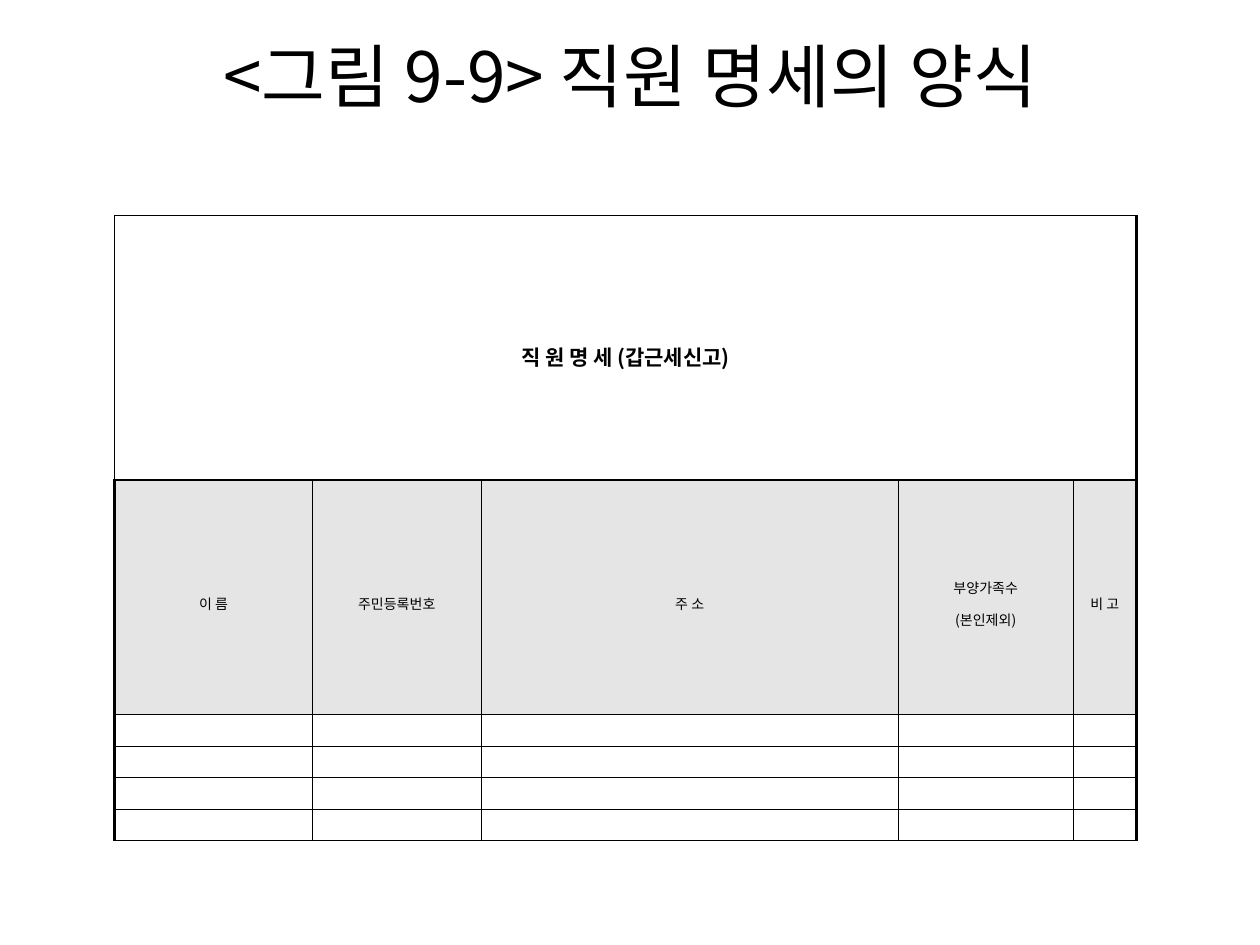
import dataclasses

import lxml.etree
import pptx
import pptx.dml.color
import pptx.enum.text
import pptx.oxml.ns
import pptx.util

Inches, Pt = pptx.util.Inches, pptx.util.Pt
Align, Anchor = pptx.enum.text.PP_ALIGN, pptx.enum.text.MSO_ANCHOR
qn = pptx.oxml.ns.qn

FONT = "Noto Sans CJK KR"
BLACK, WHITE, GRAY = "000000", "FFFFFF", "E5E5E5"
THIN, THICK = 0.28, 1.7
BLANKS = 4


@dataclasses.dataclass
class Field:
    label: str
    width: float


FIELDS = [
    Field("이 름", 1.57),
    Field("주민등록번호", 1.34),
    Field("주 소", 3.31),
    Field("부양가족수\n(본인제외)", 1.39),
    Field("비 고", 0.5),
]
HEIGHTS = [2.1, 1.86] + [0.25] * BLANKS


def color(code: str) -> pptx.dml.color.RGBColor:
    return pptx.dml.color.RGBColor.from_string(code)


def style(frame, size: float, bold: bool = False, space: float | None = None) -> None:
    for para in frame.paragraphs:
        para.alignment = Align.CENTER
        para.line_spacing = space
        for run in para.runs:
            font = run.font
            font.size, font.bold, font.name = Pt(size), bold, FONT
            font.color.rgb = color(BLACK)
            face = lxml.etree.SubElement(font._element, qn("a:ea"))
            face.set("typeface", FONT)
        end = lxml.etree.SubElement(para._p, qn("a:endParaRPr"))
        end.set("sz", str(round(size * 100)))


def border(cell, row: int, col: int) -> None:
    """Thin lines, with thick ones around the form and under its heading."""
    widths = {
        "L": THICK if col == 0 and row > 0 else THIN,
        "R": THICK if col == len(FIELDS) - 1 or row == 0 else THIN,
        "T": THICK if row == 1 else THIN,
        "B": THICK if row == 0 else THIN,
    }
    props = cell._tc.get_or_add_tcPr()
    for side, width in widths.items():
        line = lxml.etree.SubElement(props, qn(f"a:ln{side}"))
        line.set("w", str(int(Pt(width))))
        fill = lxml.etree.SubElement(line, qn("a:solidFill"))
        lxml.etree.SubElement(fill, qn("a:srgbClr")).set("val", BLACK)


def draw_cell(cell, row: int, col: int) -> None:
    cell.vertical_anchor = Anchor.MIDDLE
    cell.margin_left = cell.margin_right = Inches(0.05)
    cell.margin_top = cell.margin_bottom = Inches(0.01)
    border(cell, row, col)
    cell.fill.solid()
    cell.fill.fore_color.rgb = color(GRAY if row == 1 else WHITE)
    if row == 0 and col == 0:
        cell.text_frame.text = "직 원 명 세 (갑근세신고)"
        style(cell.text_frame, 12, bold=True, space=1.6)
    elif row == 1:
        cell.text_frame.text = FIELDS[col].label
        style(cell.text_frame, 8, space=1.6)
    else:
        style(cell.text_frame, 8)


def draw_form(slide) -> None:
    shape = slide.shapes.add_table(
        len(HEIGHTS), len(FIELDS), Inches(0.91), Inches(1.71),
        Inches(sum(field.width for field in FIELDS)), Inches(sum(HEIGHTS)))
    table = shape.table
    table.first_row = table.horz_banding = False
    for col, field in enumerate(FIELDS):
        table.columns[col].width = Inches(field.width)
    for row, height in enumerate(HEIGHTS):
        table.rows[row].height = Inches(height)
        for col in range(len(FIELDS)):
            draw_cell(table.cell(row, col), row, col)
    table.cell(0, 0).merge(table.cell(0, len(FIELDS) - 1))


def draw_title(slide) -> None:
    title = slide.shapes.title
    title.left, title.top = Inches(0.5), Inches(0.3)
    title.width, title.height = Inches(9), Inches(1.25)
    frame = title.text_frame
    frame.text = "<그림 9-9> 직원 명세의 양식\v"
    frame.vertical_anchor = Anchor.MIDDLE
    frame.auto_size = pptx.enum.text.MSO_AUTO_SIZE.NONE
    style(frame, 39.6)


def main() -> None:
    deck = pptx.Presentation()
    deck.slide_width, deck.slide_height = Inches(10), Inches(7.5)
    slide = deck.slides.add_slide(deck.slide_layouts[5])
    draw_title(slide)
    draw_form(slide)
    deck.save("out.pptx")


if __name__ == "__main__":
    main()
